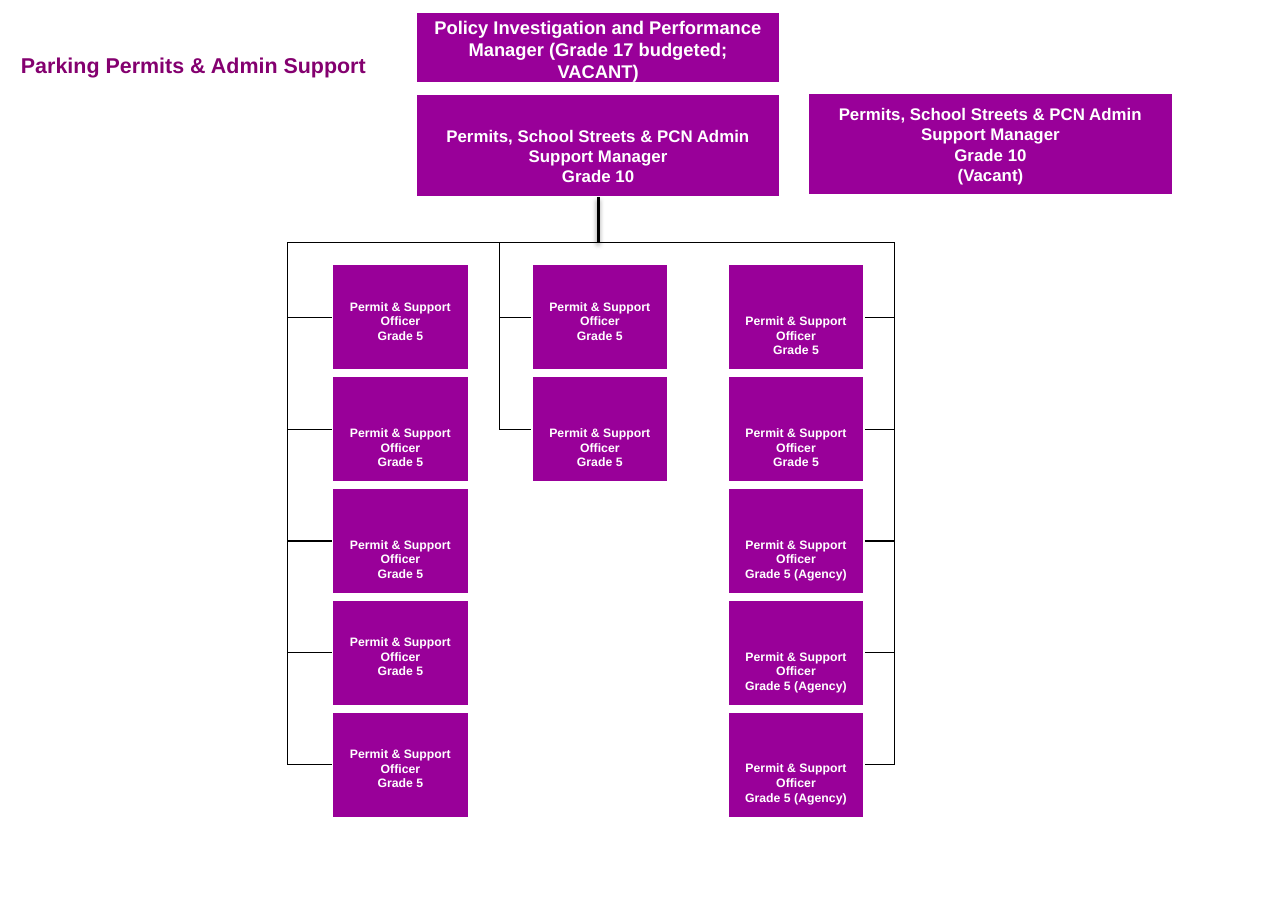
from lxml import etree
from pptx import Presentation
from pptx.dml.color import RGBColor
from pptx.enum import shapes, text
from pptx.oxml import ns
from pptx.util import Pt

PURPLE = RGBColor(0x99, 0x00, 0x99)
PLUM = RGBColor(0x84, 0x00, 0x6F)
WHITE = RGBColor(0xFF, 0xFF, 0xFF)
BLACK = RGBColor(0x00, 0x00, 0x00)

TOP, MIDDLE = text.MSO_ANCHOR.TOP, text.MSO_ANCHOR.MIDDLE
LEFT, CENTER = text.PP_ALIGN.LEFT, text.PP_ALIGN.CENTER
LEFT_SIDE, BOTTOM_SIDE, RIGHT_SIDE = 1, 2, 3

BAR_Y = 158.4
ROW_TOP, ROW_PITCH = 172.4, 73.1
OFFICER_WIDTH, OFFICER_HEIGHT = 90, 70
MANAGER_WIDTH = 239
HIGH_TEXT, LOW_TEXT = 23, 32.4

OFFICER = ["Permit & Support Officer", "Grade 5"]
AGENCY_OFFICER = ["Permit & Support Officer", "Grade 5 (Agency)"]
MANAGER = ["Permits, School Streets & PCN Admin Support Manager", "Grade 10"]

COLUMNS = [
    (216.7, 188, LEFT_SIDE, [
        (OFFICER, HIGH_TEXT), (OFFICER, LOW_TEXT), (OFFICER, LOW_TEXT),
        (OFFICER, HIGH_TEXT), (OFFICER, HIGH_TEXT)]),
    (347, 326.2, LEFT_SIDE, [(OFFICER, HIGH_TEXT), (OFFICER, LOW_TEXT)]),
    (475.2, 584.6, RIGHT_SIDE,
     [(OFFICER, LOW_TEXT)] * 2 + [(AGENCY_OFFICER, LOW_TEXT)] * 3),
]


def apply_format(target, values):
    for name, value in values.items():
        setattr(target, name, value)


def write_text(shape, lines, size, color, alignment, frame_format):
    frame = shape.text_frame
    apply_format(frame, {"word_wrap": True, **frame_format})
    frame.text = "\n".join(lines)
    for paragraph in frame.paragraphs:
        paragraph.alignment = alignment
        apply_format(paragraph.font, {"name": "Arial", "size": Pt(size), "bold": True})
        paragraph.font.color.rgb = color


def add_title(slide, title):
    shape = slide.shapes.title
    apply_format(shape, {"left": Pt(7.2), "top": Pt(9.4),
                         "width": Pt(299.5), "height": Pt(65.5)})
    write_text(shape, [title], 14, PLUM, LEFT, {
        "auto_size": text.MSO_AUTO_SIZE.NONE, "vertical_anchor": MIDDLE,
        "margin_left": Pt(6.5), "margin_right": Pt(6.5),
        "margin_top": Pt(2.9), "margin_bottom": Pt(2.9)})


def add_box(slide, left, top, width, height, lines, size, anchor=TOP, inset=3.6):
    box = slide.shapes.add_shape(shapes.MSO_SHAPE.RECTANGLE,
                                 Pt(left), Pt(top), Pt(width), Pt(height))
    box.shadow.inherit = False
    box.fill.solid()
    box.fill.fore_color.rgb = PURPLE
    box.line.color.rgb = WHITE
    box.line.width = Pt(2)
    write_text(box, lines, size, WHITE, CENTER,
               {"vertical_anchor": anchor, "margin_top": Pt(inset)})
    return box


def add_line(slide, start, end, width=0.75):
    line = slide.shapes.add_connector(shapes.MSO_CONNECTOR.STRAIGHT,
                                      *map(Pt, start + end))
    line.line.color.rgb = BLACK
    line.line.width = Pt(width)
    effects = etree.SubElement(line._element.spPr, ns.qn("a:effectLst"))
    return line, effects


def add_trunk(slide, manager, x):
    trunk, effects = add_line(slide, (x, 128.9), (x, BAR_Y), 2)
    trunk.begin_connect(manager, BOTTOM_SIDE)
    shadow = etree.SubElement(effects, ns.qn("a:outerShdw"), blurRad=str(Pt(3.1)),
                              dist=str(Pt(1.6)), dir="5400000", rotWithShape="0")
    color = etree.SubElement(shadow, ns.qn("a:srgbClr"), val=str(BLACK))
    etree.SubElement(color, ns.qn("a:alpha"), val="38000")


def add_column(slide, left, spine_x, side, officers):
    edge = left if side == LEFT_SIDE else left + OFFICER_WIDTH
    for row, (lines, inset) in enumerate(officers):
        top = ROW_TOP + row * ROW_PITCH
        middle = top + OFFICER_HEIGHT / 2
        box = add_box(slide, left, top, OFFICER_WIDTH, OFFICER_HEIGHT,
                      lines, 8, inset=inset)
        branch, _ = add_line(slide, (edge, middle), (spine_x, middle))
        branch.begin_connect(box, side)
    add_line(slide, (spine_x, BAR_Y), (spine_x, middle))


def main():
    presentation = Presentation()
    presentation.slide_width, presentation.slide_height = Pt(841.68), Pt(595.44)
    slide = presentation.slides.add_slide(presentation.slide_layouts[5])

    add_title(slide, "Parking Permits & Admin Support")
    add_box(slide, 271.4, 7.2, MANAGER_WIDTH, 47.5,
            ["Policy Investigation and Performance Manager (Grade 17 budgeted; VACANT)"], 12)
    manager = add_box(slide, 271.4, 61.2, MANAGER_WIDTH, 67.7, MANAGER, 11, MIDDLE, 17.2)
    add_box(slide, 527.8, 60.5, MANAGER_WIDTH, 67.7, MANAGER + ["(Vacant)"], 11, MIDDLE)

    add_trunk(slide, manager, 271.4 + MANAGER_WIDTH / 2)
    add_line(slide, (COLUMNS[0][1], BAR_Y), (COLUMNS[-1][1], BAR_Y))
    for column in COLUMNS:
        add_column(slide, *column)

    presentation.save("out.pptx")


if __name__ == "__main__":
    main()
